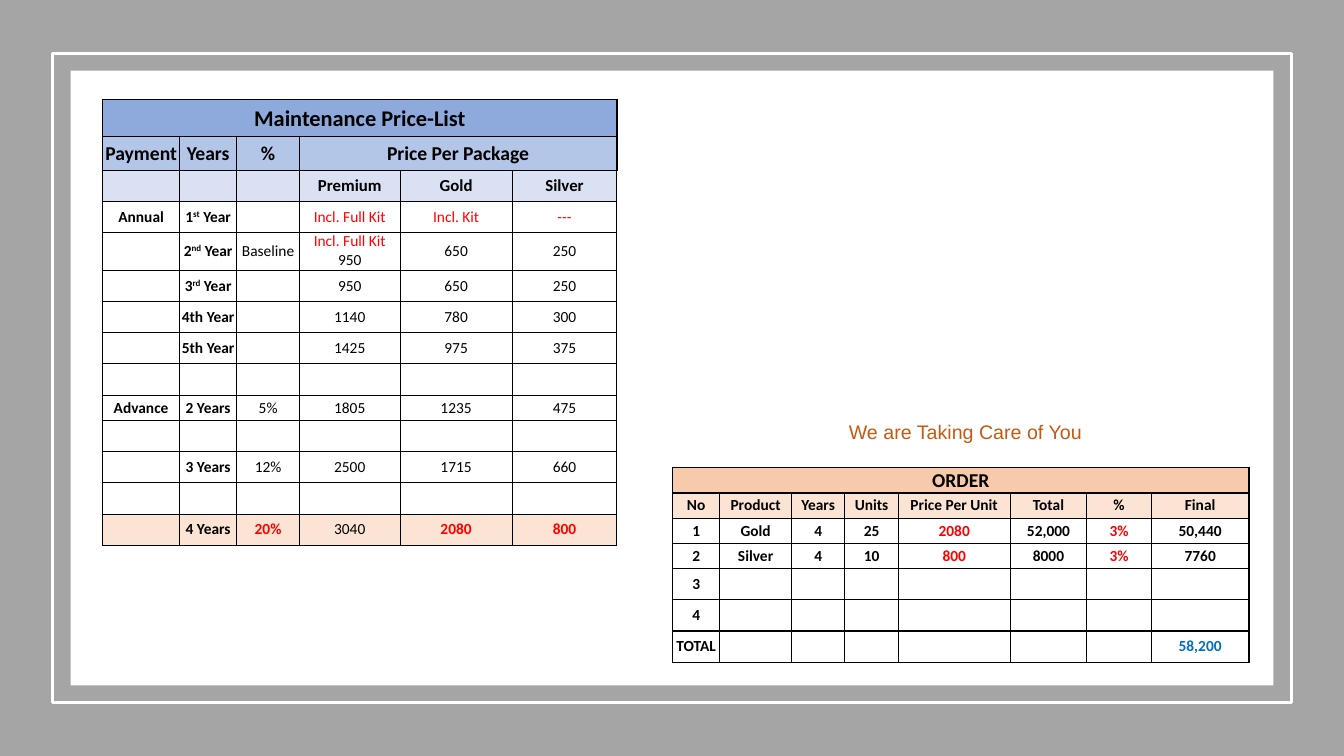
import lxml.etree
import pptx
import pptx.dml.color
import pptx.enum.shapes
import pptx.enum.text
import pptx.oxml.ns
import pptx.util

Inches = pptx.util.Inches
BLACK, RED, BLUE, ORANGE = "000000", "FF0000", "0070C0", "C55A11"
WHITE, GRAY, PEACH = "FFFFFF", "A5A5A5", "FBE4D4"

PRICE_COLUMNS = [0.76, 0.57, 0.62, 1, 1.11, 1.04]
PRICE_HEIGHTS = [0.36, 0.33, 0.31, 0.25, 0.38] + [0.31] * 4 + [0.25] + [0.31] * 4
PRICE_ROWS = [
    ["Maintenance Price-List", "", "", "", "", ""],
    ["Payment", "Years", "%", "Price Per Package", "", ""],
    ["", "", "", "Premium", "Gold", "Silver"],
    ["Annual", "1^st^ Year", "", "Incl. Full Kit", "Incl. Kit", "---"],
    ["", "2^nd^ Year", "Baseline", "Incl. Full Kit\n950", "650", "250"],
    ["", "3^rd^ Year", "", "950", "650", "250"],
    ["", "4th Year", "", "1140", "780", "300"],
    ["", "5th Year", "", "1425", "975", "375"],
    ["", "", "", "", "", ""],
    ["Advance", "2 Years", "5%", "1805", "1235", "475"],
    ["", "", "", "", "", ""],
    ["", "3 Years", "12%", "2500", "1715", "660"],
    ["", "", "", "", "", ""],
    ["", "4 Years", "20%", "3040", "2080", "800"],
]
ORDER_COLUMNS = [0.47, 0.71, 0.53, 0.53, 1.11, 0.76, 0.64, 0.97]
ORDER_HEIGHTS = [0.25] * 4 + [0.31] * 3
ORDER_ROWS = [
    ["ORDER", "", "", "", "", "", "", ""],
    ["No", "Product", "Years", "Units", "Price Per Unit", "Total", "%", "Final"],
    ["1", "Gold", "4", "25", "2080", "52,000", "3%", "50,440"],
    ["2", "Silver", "4", "10", "800", "8000", "3%", "7760"],
    ["3", "", "", "", "", "", "", ""],
    ["4", "", "", "", "", "", "", ""],
    ["TOTAL", "", "", "", "", "", "", "58,200"],
]


def color(value):
    return pptx.dml.color.RGBColor.from_string(value)


def set_attributes(target, values):
    for name, value in values.items():
        setattr(target, name, value)


def add_run(paragraph, text, size, hex_color, bold=False, font="Calibri"):
    run = paragraph.add_run()
    run.text = text
    set_attributes(run.font, {"size": pptx.util.Pt(size), "bold": bold, "name": font})
    run.font.color.rgb = color(hex_color)
    return run


def add_rectangle(slide, box, fill=None, line=None):
    shape = slide.shapes.add_shape(
        pptx.enum.shapes.MSO_SHAPE.RECTANGLE, *[Inches(length) for length in box])
    shape.shadow.inherit = False
    if fill:
        shape.fill.solid()
        shape.fill.fore_color.rgb = color(fill)
    else:
        shape.fill.background()
    if line:
        shape.line.color.rgb = color(line)
        shape.line.width = pptx.util.Pt(2)
    else:
        shape.line.fill.background()


def add_frame(slide, box):
    left, top, width, height = box
    add_rectangle(slide, box, fill=GRAY)
    for inset_x, inset_y, fill, line in [(0.52, 0.53, None, WHITE), (0.7, 0.7, WHITE, None)]:
        inner = (left + inset_x, top + inset_y, width - 2 * inset_x, height - 2 * inset_y)
        add_rectangle(slide, inner, fill, line)


def add_slogan(slide, box):
    shape = slide.shapes.add_textbox(*[Inches(length) for length in box])
    shape.text_frame.word_wrap = True
    add_run(shape.text_frame.paragraphs[0], "We are Taking Care of You", 14, ORANGE, font="Arial")


def set_borders(cell, width):
    properties = cell._tc.get_or_add_tcPr()
    for side in ("lnL", "lnR", "lnT", "lnB"):
        line = lxml.etree.SubElement(
            properties, pptx.oxml.ns.qn("a:" + side), w=str(pptx.util.Pt(width)))
        fill = lxml.etree.SubElement(line, pptx.oxml.ns.qn("a:solidFill"))
        lxml.etree.SubElement(fill, pptx.oxml.ns.qn("a:srgbClr"), val=BLACK)


def write_cell(cell, text, style):
    margin_x, margin_y = (0.09, 0.05) if style.get("padded") else (0.01, 0)
    set_attributes(cell, {
        "margin_left": Inches(margin_x), "margin_right": Inches(margin_x),
        "margin_top": Inches(margin_y), "margin_bottom": Inches(margin_y),
        "vertical_anchor": pptx.enum.text.MSO_ANCHOR.MIDDLE,
    })
    set_borders(cell, style["border"])
    cell.fill.solid()
    cell.fill.fore_color.rgb = color(style["fill"])
    for index, line in enumerate(text.split("\n")):
        frame = cell.text_frame
        paragraph = frame.add_paragraph() if index else frame.paragraphs[0]
        paragraph.alignment = pptx.enum.text.PP_ALIGN.CENTER
        hex_color = BLACK if index else style["color"]
        for part, piece in enumerate(line.split("^")):
            if piece:
                run = add_run(paragraph, piece, style["size"], hex_color, style["bold"])
                if part % 2:
                    run._r.get_or_add_rPr().set("baseline", "30000")


def add_grid(slide, left, top, widths, heights, rows, merges, style_for):
    frame = slide.shapes.add_table(
        len(rows), len(widths), Inches(left), Inches(top),
        Inches(sum(widths)), Inches(sum(heights)))
    table = frame.table
    set_attributes(table, {"first_row": False, "horz_banding": False})
    for column, width in zip(table.columns, widths):
        column.width = Inches(width)
    for row, height in zip(table.rows, heights):
        row.height = Inches(height)
    for row, first, last in merges:
        table.cell(row, first).merge(table.cell(row, last))
    for row, texts in enumerate(rows):
        for column, text in enumerate(texts):
            write_cell(table.cell(row, column), text, style_for(row, column))


def price_style(row, column):
    last = len(PRICE_ROWS) - 1
    best_offer = row == last and column in (2, 4, 5)
    included = (row == 3 and column >= 3) or (row, column) == (4, 3)
    fills = {0: "8EA9DB", 1: "B4C6E7", 2: "D9E1F2", last: PEACH}
    return {
        "size": {0: 16, 1: 14, 2: 12}.get(row, 11),
        "bold": row < 3 or column < 2 or best_offer,
        "color": RED if best_offer or included else BLACK,
        "fill": fills.get(row, WHITE),
        "border": 1 if row < 2 else 0.75,
        "padded": row == 0 or (row == 1 and column >= 3),
    }


def order_style(row, column):
    hex_color = BLACK
    if row in (2, 3) and column in (4, 6):
        hex_color = RED
    elif row == len(ORDER_ROWS) - 1 and column == len(ORDER_COLUMNS) - 1:
        hex_color = BLUE
    return {
        "size": 11 if row else 14,
        "bold": True,
        "color": hex_color,
        "fill": {0: "F7CAAC", 1: PEACH}.get(row, WHITE),
        "border": 1,
    }


def main():
    presentation = pptx.Presentation()
    set_attributes(presentation, {"slide_width": Inches(13.33), "slide_height": Inches(7.5)})
    slide = presentation.slides.add_slide(presentation.slide_layouts[6])
    add_frame(slide, (0, 0, 13.33, 7.5))
    add_slogan(slide, (8.32, 4.12, 3.32, 0.34))
    add_grid(slide, 6.67, 4.64, ORDER_COLUMNS, ORDER_HEIGHTS, ORDER_ROWS,
             [(0, 0, 7)], order_style)
    add_grid(slide, 1.02, 0.99, PRICE_COLUMNS, PRICE_HEIGHTS, PRICE_ROWS,
             [(0, 0, 5), (1, 3, 5)], price_style)
    presentation.save("out.pptx")


if __name__ == "__main__":
    main()
